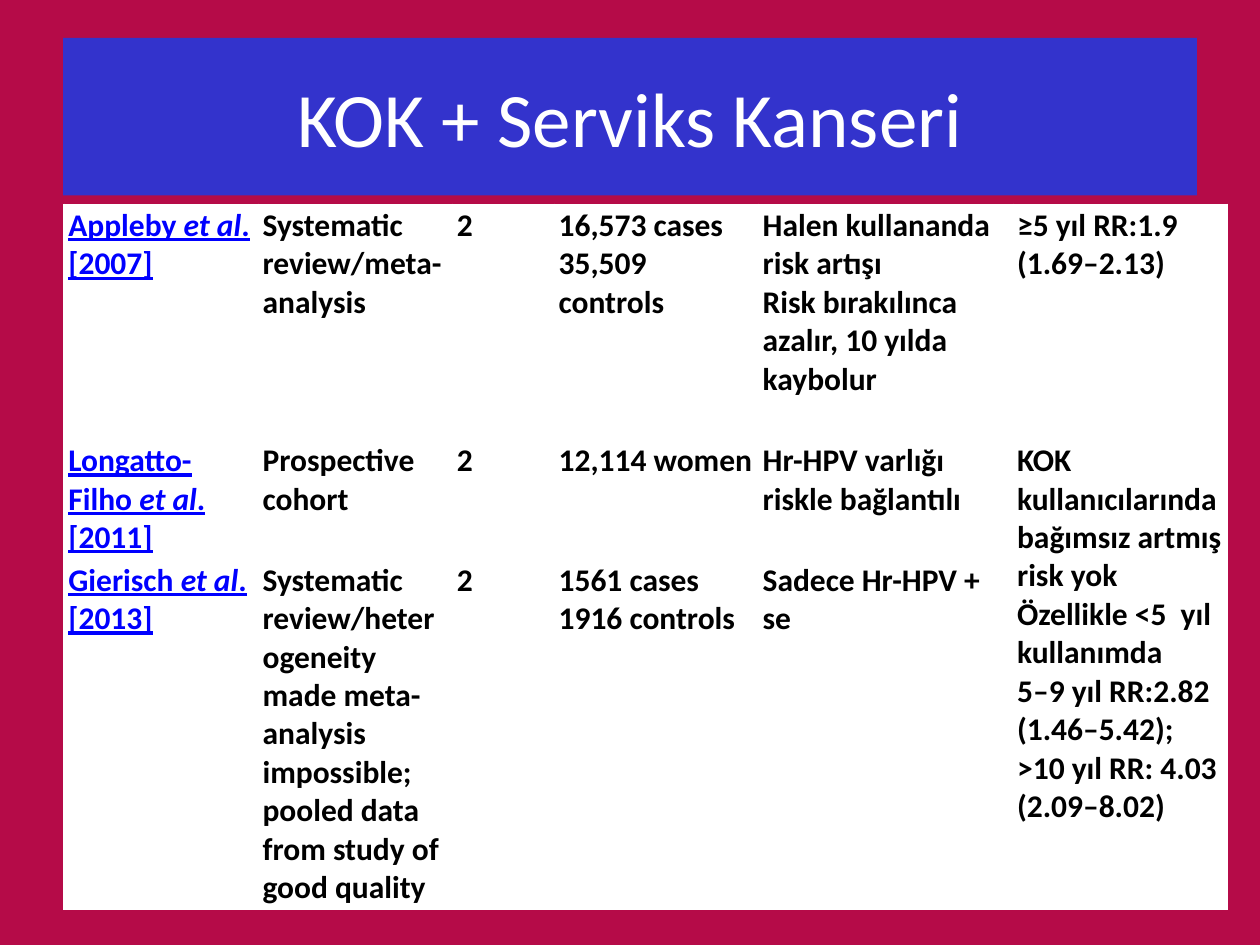
from pptx import Presentation
from pptx.dml.color import RGBColor
from pptx.enum.text import MSO_ANCHOR, PP_ALIGN
from pptx.util import Pt

COLORS = {"back": "B50B48", "banner": "3333CC", "white": "FFFFFF",
          "text": "000000", "link": "0000FF"}
COLUMNS = [111, 111, 58.2, 116.6, 145.4, 122.2]
ROWS = [134.4, 68.2, 200]
# First column: author and year; other columns: one string per paragraph
STUDIES = [
    [("Appleby", 2007), ["Systematic review/meta-analysis"], ["2"],
     ["16,573 cases 35,509 controls"],
     ["Halen kullananda risk artışı", "Risk bırakılınca azalır, 10 yılda kaybolur"],
     ["≥5 yıl RR:1.9 (1.69–2.13)"]],
    [("Longatto-Filho", 2011), ["Prospective cohort"], ["2"], ["12,114 women"],
     ["Hr-HPV varlığı riskle bağlantılı"],
     ["KOK kullanıcılarında bağımsız artmış risk yok",
      "Özellikle <5  yıl kullanımda",
      "5–9 yıl RR:2.82 (1.46–5.42);  >10 yıl RR: 4.03 (2.09–8.02)"]],
    [("Gierisch", 2013),
     ["Systematic review/heterogeneity made meta-analysis impossible; "
      "pooled data from study of good quality"],
     ["2"], ["1561 cases 1916 controls"], ["Sadece Hr-HPV + se"]],
]


class Deck:
    font = "Calibri"

    def __init__(self, width, height):
        self.prs = Presentation()
        self.prs.slide_width, self.prs.slide_height = Pt(width), Pt(height)
        self.s = self.prs.slides.add_slide(self.prs.slide_layouts[5])
        self.paint(self.s.background.fill, "back")

    def paint(self, fill, color):
        fill.solid()
        fill.fore_color.rgb = RGBColor.from_string(COLORS[color])

    def style(self, font, size, color, bold=False):
        font.name, font.size, font.bold = self.font, Pt(size), bold
        font.color.rgb = RGBColor.from_string(COLORS[color])

    def title(self, text, left, top, width, height):
        sp = self.s.shapes.title
        sp.left, sp.top, sp.width, sp.height = map(Pt, (left, top, width, height))
        self.paint(sp.fill, "banner")
        tf = sp.text_frame
        tf.text = text
        tf.vertical_anchor = MSO_ANCHOR.MIDDLE
        p = tf.paragraphs[0]
        p.alignment = PP_ALIGN.CENTER
        self.style(p.font, 44, "white")

    def table(self, studies, left, top, columns, rows):
        table = self.s.shapes.add_table(
            len(rows), len(columns), Pt(left), Pt(top),
            Pt(sum(columns)), Pt(sum(rows))).table
        table.first_row = table.horz_banding = False
        for column, width in zip(table.columns, columns):
            column.width = Pt(width)
        for row, height in zip(table.rows, rows):
            row.height = Pt(height)
        for cell in table.iter_cells():
            self.paint(cell.fill, "white")
            cell.margin_left = cell.margin_right = Pt(2.4)
            cell.margin_top = cell.margin_bottom = Pt(1.2)
        for i, (study, *texts) in enumerate(studies):
            self.citation(table.cell(i, 0), *study)
            for j, paragraphs in enumerate(texts, 1):
                self.cell_text(table.cell(i, j), paragraphs)
        return table

    def cell_text(self, cell, paragraphs):
        cell.text = "\n".join(paragraphs)
        for p in cell.text_frame.paragraphs:
            self.style(p.font, 18, "text", bold=True)

    def citation(self, cell, author, year):
        p = cell.text_frame.paragraphs[0]
        self.style(p.font, 18, "link", bold=True)
        p.font.underline = True
        for text in (f"{author}\u00a0", "et al", f". [{year}]"):
            r = p.add_run()
            r.text = text
            r.font.italic = text == "et al"

    def save(self):
        self.prs.save("out.pptx")


def main():
    deck = Deck(720, 540)
    deck.title("KOK + Serviks Kanseri", 36, 21.6, 648, 90)
    table = deck.table(STUDIES, 36.7, 116.8, COLUMNS, ROWS)
    table.cell(1, 5).merge(table.cell(2, 5))
    deck.save()


if __name__ == "__main__":
    main()
